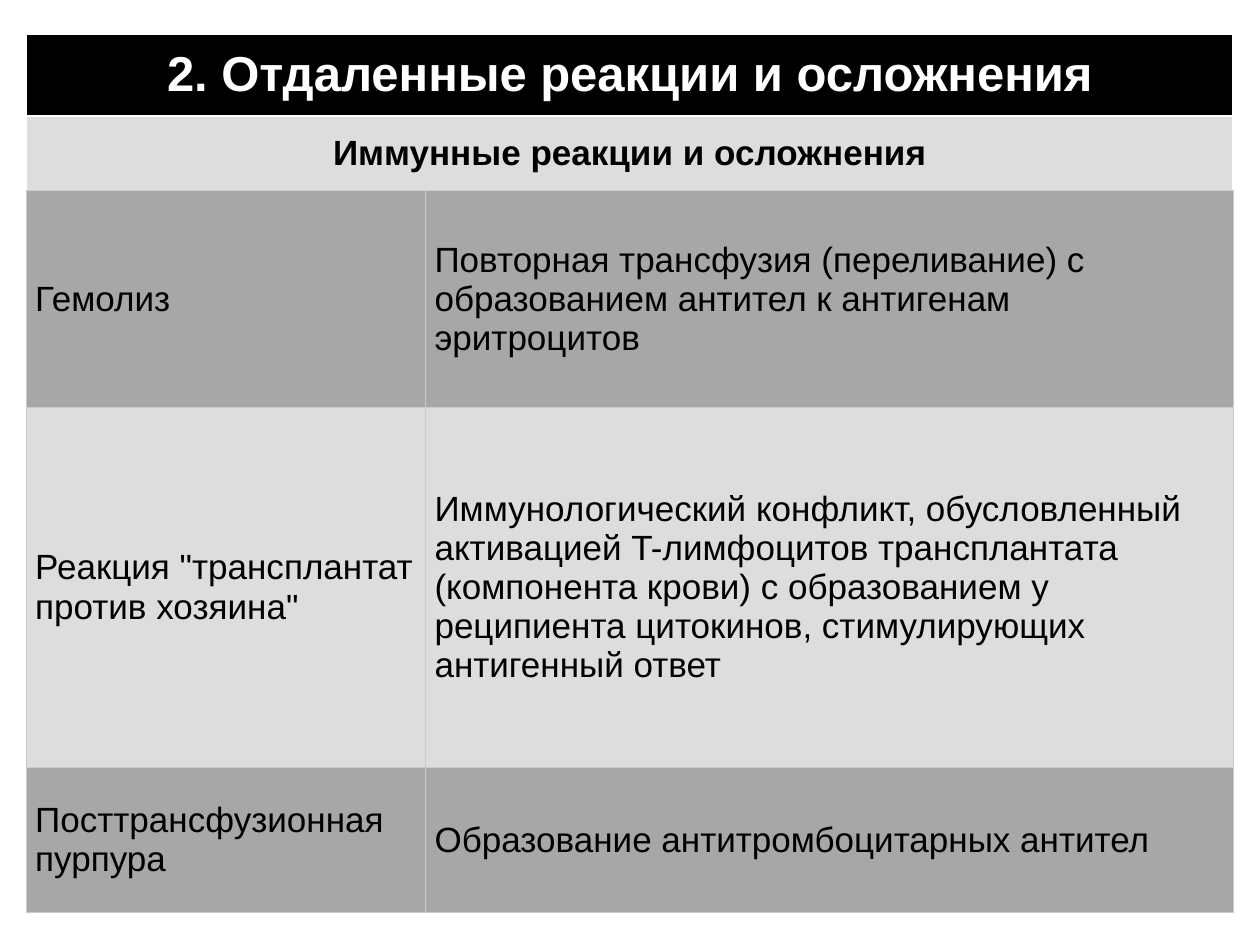
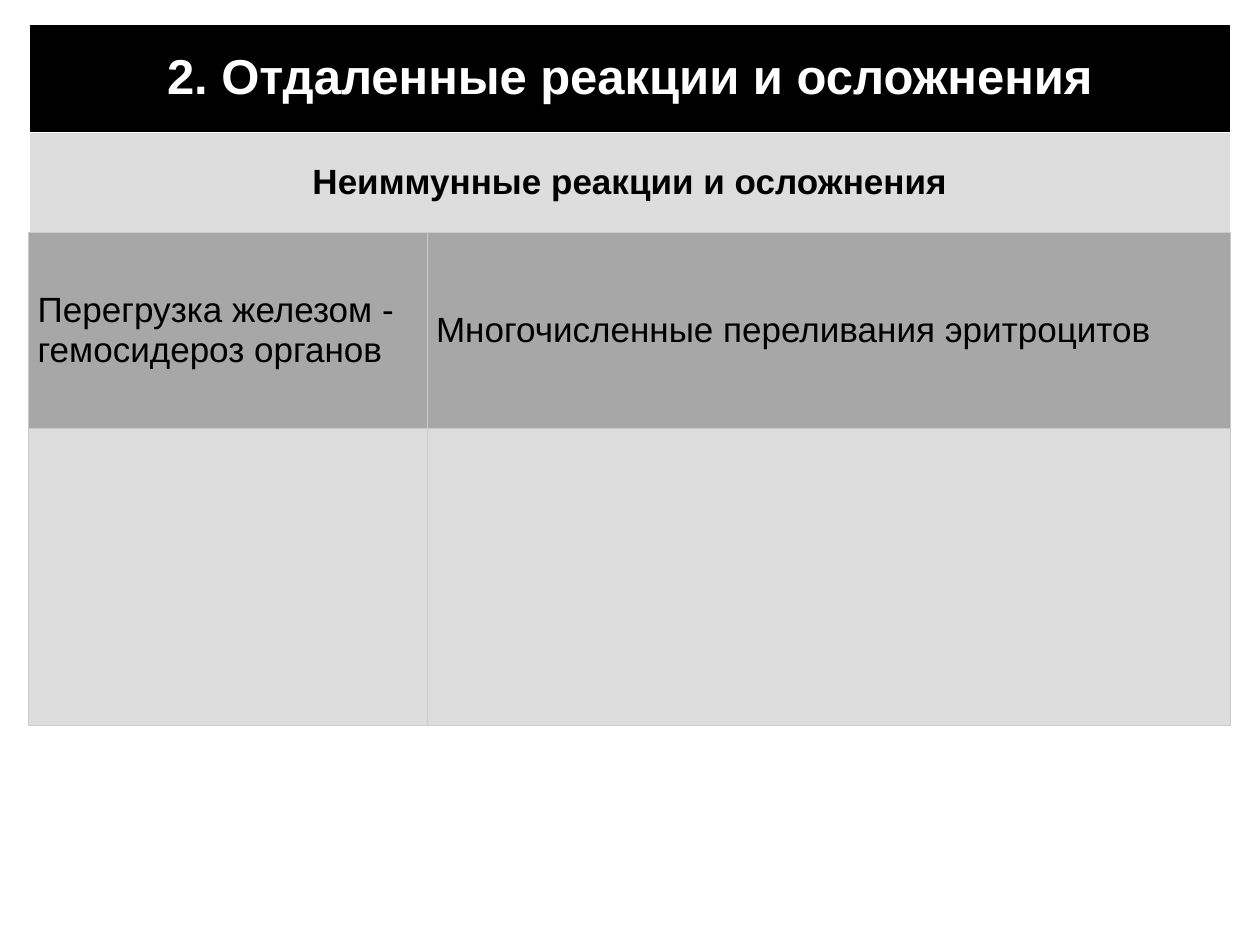
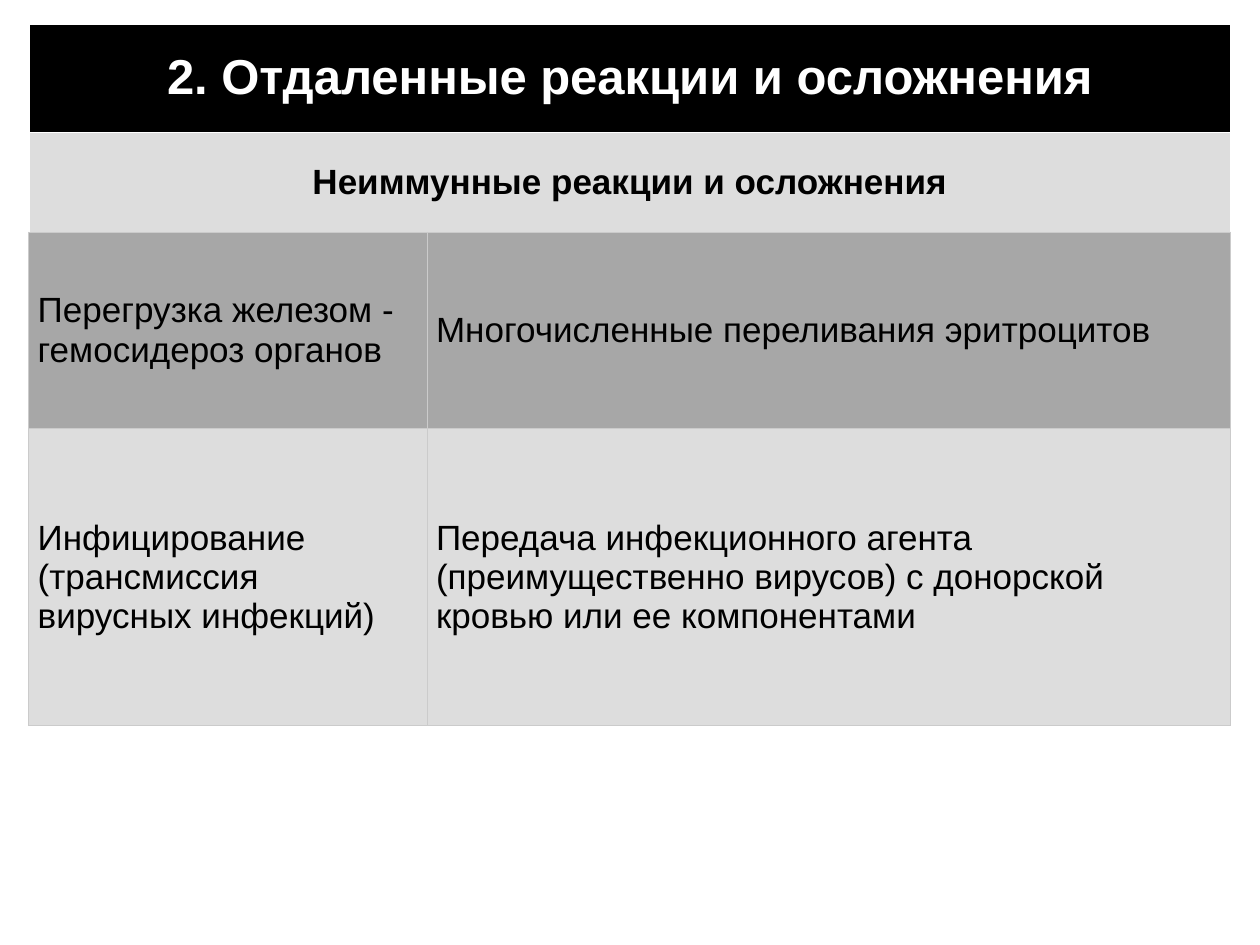
from pptx import Presentation
from pptx.dml.color import RGBColor as RGB
from pptx.enum.text import MSO_ANCHOR as Anchor, PP_ALIGN as Align
from pptx.oxml.ns import qn
from pptx.util import Cm, Pt
from lxml.etree import SubElement

THEME = {
    "font": "Arial",
    "heading": {"fill": "000000", "color": "FFFFFF", "size": 28, "bold": True},
    "subheading": {"fill": "DDDDDD", "color": "000000", "size": 20, "bold": True},
    "dark": {"fill": "A7A7A7", "color": "000000", "size": 20, "bold": False},
    "light": {"fill": "DDDDDD", "color": "000000", "size": 20, "bold": False},
    "white": "FFFFFF",
    "grid": "CBCBCB",
}
WHITE_LINE = (THEME["white"], 1)
GRID_LINE = (THEME["grid"], 0.5)
HEADING_BORDERS = {"L": WHITE_LINE, "R": WHITE_LINE, "T": (THEME["white"], 3), "B": WHITE_LINE}
SUBHEADING_BORDERS = {"L": WHITE_LINE, "R": WHITE_LINE, "T": WHITE_LINE, "B": GRID_LINE}
GRID_BORDERS = dict.fromkeys("LRTB", GRID_LINE)

HEADING = "2. Отдаленные реакции и осложнения"
IRON_OVERLOAD = ("Перегрузка железом - гемосидероз органов", "Многочисленные переливания эритроцитов")
IMMUNE_LAYOUT = {
    "left": 0.53, "top": 0.66,
    "columns": (8.05, 16.28),
    "rows": (1.68, 1.5, 4.37, 7.26, 2.92),
}
NONIMMUNE_LAYOUT = {
    "left": 0.58, "top": 0.46,
    "columns": (8.03, 16.2),
    "rows": (2.21, 2.01, 3.96, 5.99),
}
SLIDES = [
    (IMMUNE_LAYOUT, "Иммунные реакции и осложнения", [
        ("Гемолиз",
         "Повторная трансфузия (переливание) с образованием антител к антигенам эритроцитов"),
        ('Реакция "трансплантат против хозяина"',
         "Иммунологический конфликт, обусловленный активацией T-лимфоцитов трансплантата "
         "(компонента крови) с образованием у реципиента цитокинов, стимулирующих антигенный ответ"),
        ("Посттрансфузионная пурпура",
         "Образование антитромбоцитарных антител"),
    ]),
    (NONIMMUNE_LAYOUT, "Неиммунные реакции и осложнения", [
        IRON_OVERLOAD,
        ("", ""),
    ]),
    (NONIMMUNE_LAYOUT, "Неиммунные реакции и осложнения", [
        IRON_OVERLOAD,
        ("Инфицирование (трансмиссия вирусных инфекций)",
         "Передача инфекционного агента (преимущественно вирусов) с донорской кровью "
         "или ее компонентами"),
    ]),
]


def set_borders(cell, borders):
    properties = cell._tc.get_or_add_tcPr()
    for side, (color, width) in borders.items():
        line = SubElement(properties, qn(f"a:ln{side}"), w=str(Pt(width)))
        SubElement(SubElement(line, qn("a:solidFill")), qn("a:srgbClr"), val=color)


def format_cell(cell, text, look, borders, align, inset):
    set_borders(cell, borders)
    cell.fill.solid()
    cell.fill.fore_color.rgb = RGB.from_string(look["fill"])
    cell_format = {
        "vertical_anchor": Anchor.MIDDLE,
        "margin_left": inset, "margin_right": inset,
        "margin_top": 0, "margin_bottom": 0,
    }
    for name, value in cell_format.items():
        setattr(cell, name, value)
    paragraph = cell.text_frame.paragraphs[0]
    paragraph.alignment = align
    if text:
        run = paragraph.add_run()
        run.text = text
        run.font.color.rgb = RGB.from_string(look["color"])
        font_format = {"name": THEME["font"], "size": Pt(look["size"]), "bold": look["bold"]}
        for name, value in font_format.items():
            setattr(run.font, name, value)


deck = Presentation()
deck.slide_width, deck.slide_height = Cm(25.4), Cm(19.05)

for layout, subheading, reactions in SLIDES:
    slide = deck.slides.add_slide(deck.slide_layouts[6])
    columns, rows = layout["columns"], layout["rows"]
    complications = slide.shapes.add_table(
        len(rows), len(columns), Cm(layout["left"]), Cm(layout["top"]),
        Cm(sum(columns)), Cm(sum(rows))).table
    for column, width in zip(complications.columns, columns):
        column.width = Cm(width)
    for row, height in zip(complications.rows, rows):
        row.height = Cm(height)

    bands = [
        (HEADING, THEME["heading"], HEADING_BORDERS),
        (subheading, THEME["subheading"], SUBHEADING_BORDERS),
    ]
    for index, (caption, look, borders) in enumerate(bands):
        band, covered = complications.cell(index, 0), complications.cell(index, 1)
        band.merge(covered)
        format_cell(band, caption, look, borders, Align.CENTER, 0)
        format_cell(covered, "", look, borders, Align.CENTER, 0)

    for index, reaction in enumerate(reactions):
        look = THEME["light"] if index % 2 else THEME["dark"]
        for column, text in enumerate(reaction):
            cell = complications.cell(index + len(bands), column)
            format_cell(cell, text, look, GRID_BORDERS, Align.LEFT, Cm(0.18))

deck.save("out.pptx")
